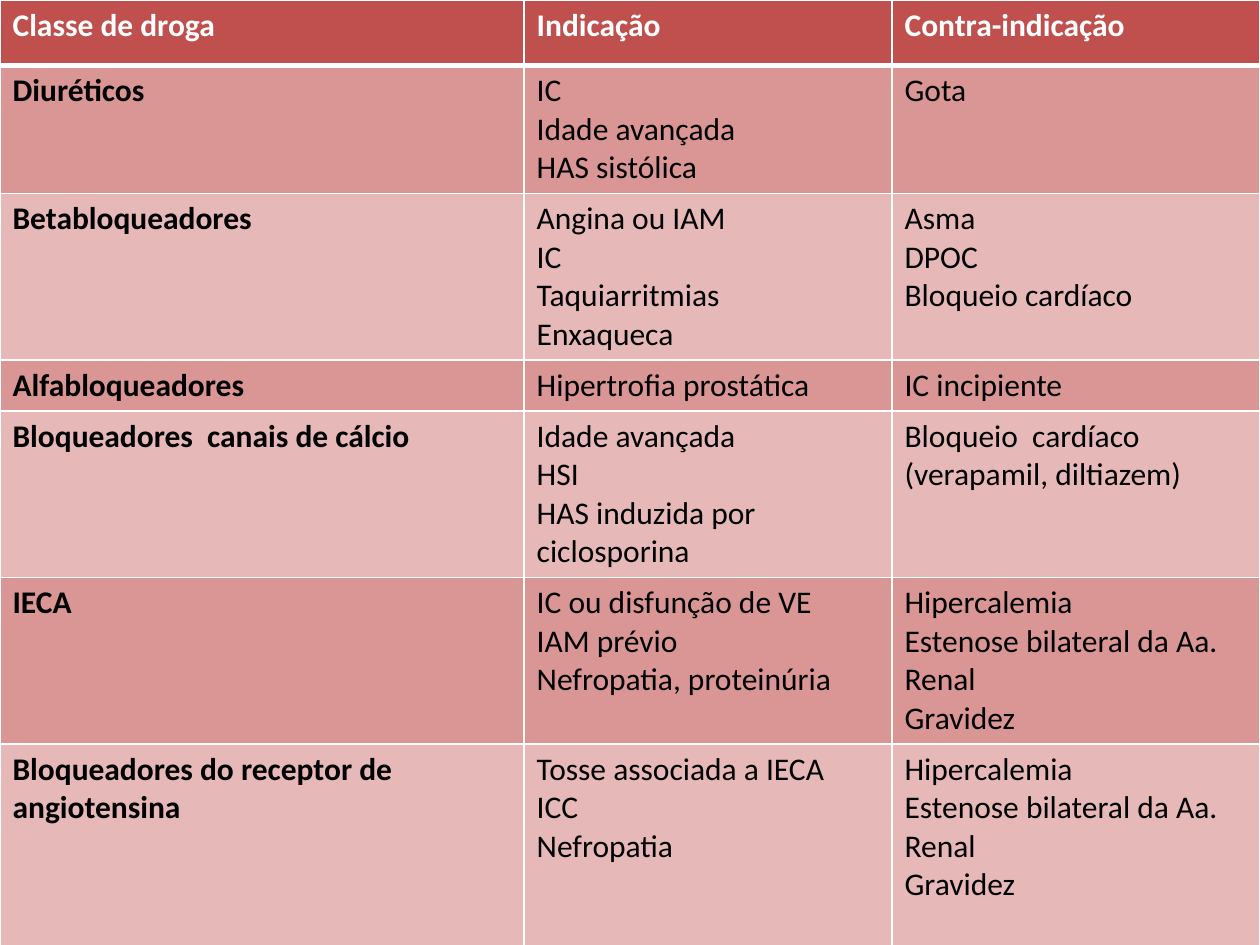
"""Build a slide with a table of drug classes, indications and contraindications."""
from lxml.etree import SubElement as Sub
from pptx import Presentation
from pptx.dml.color import RGBColor as Rgb
from pptx.oxml.ns import qn
from pptx.util import Inches as In, Pt

HUES = {"head": "C0504D", "dark": "D99694", "light": "E6B9B8",
        "white": "FFFFFF", "black": "000000"}
COLS = [4.16, 2.92, 2.92]
ROWS = [0.52, 0.76, 0.99, 0.31, 0.99, 0.99, 1.63]
RENAL = "Hipercalemia\nEstenose bilateral da Aa. Renal\nGravidez"
DATA = [
    ("Classe de droga", "Indicação", "Contra-indicação"),
    ("Diuréticos", "IC\nIdade avançada\nHAS sistólica", "Gota"),
    ("Betabloqueadores", "Angina ou IAM\nIC\nTaquiarritmias\nEnxaqueca",
     "Asma\nDPOC\nBloqueio cardíaco"),
    ("Alfabloqueadores", "Hipertrofia prostática", "IC incipiente"),
    ("Bloqueadores  canais de cálcio",
     "Idade avançada\nHSI\nHAS induzida por ciclosporina",
     "Bloqueio  cardíaco (verapamil, diltiazem)"),
    ("IECA", "IC ou disfunção de VE\nIAM prévio\nNefropatia, proteinúria", RENAL),
    ("Bloqueadores do receptor de angiotensina",
     "Tosse associada a IECA\nICC\nNefropatia", RENAL),
]


def write(cell, text, hue="black", bold=False, size=18, font="Calibri"):
    cell.text = text
    for para in cell.text_frame.paragraphs:
        for run in para.runs:
            run.font.name, run.font.size, run.font.bold = font, Pt(size), bold
            run.font.color.rgb = Rgb.from_string(HUES[hue])


def edge(cell, side, width):
    line = Sub(cell._tc.get_or_add_tcPr(), qn("a:ln" + side), w=str(Pt(width)))
    Sub(Sub(line, qn("a:solidFill")), qn("a:srgbClr"), val=HUES["white"])


deck = Presentation()
deck.slide_width, deck.slide_height = In(10), In(7.5)
slide = deck.slides.add_slide(deck.slide_layouts[6])
back = slide.background.fill
back.solid()
back.fore_color.rgb = Rgb.from_string(HUES["black"])

frame = slide.shapes.add_table(len(ROWS), len(COLS), 0, 0, In(10), In(7.45))
table = frame.table
for col, width in zip(table.columns, COLS):
    col.width = In(width)
for row, height in zip(table.rows, ROWS):
    row.height = In(height)
frame.height = In(7.45)

for r, texts in enumerate(DATA):
    head = r == 0
    shade = "head" if head else "dark" if r % 2 else "light"
    for c, text in enumerate(texts):
        cell = table.cell(r, c)
        write(cell, text, hue="white" if head else "black", bold=head or c == 0)
        for side in "LRTB":
            thick = (head and side == "B") or (r == 1 and side == "T")
            edge(cell, side, 3 if thick else 1)
        cell.fill.solid()
        cell.fill.fore_color.rgb = Rgb.from_string(HUES[shade])

deck.save("out.pptx")
